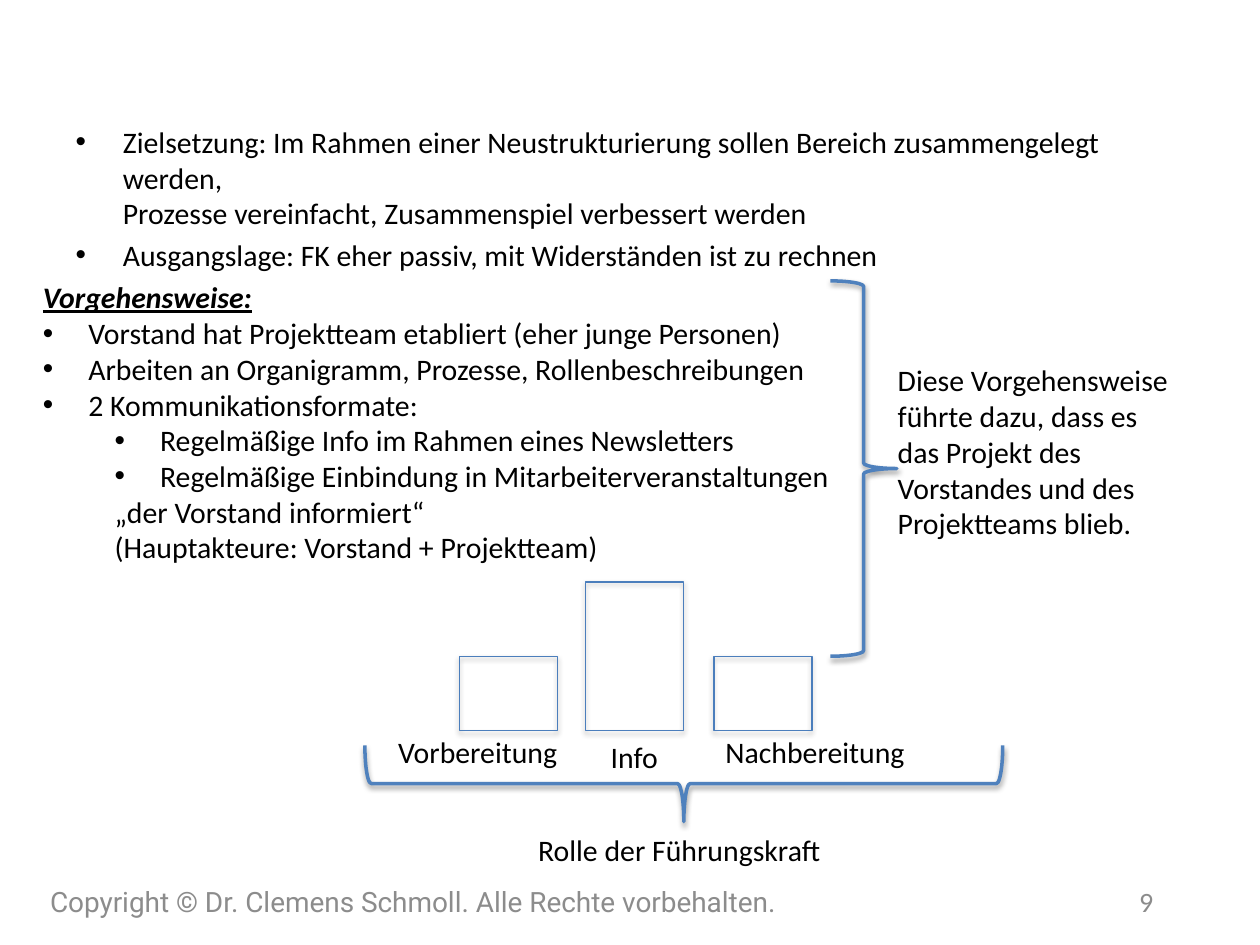
import pptx
import pptx.util
import pptx.dml.color
import pptx.enum.shapes
import pptx.enum.text
import pptx.oxml
import pptx.oxml.ns

Pt = pptx.util.Pt
Kind = pptx.enum.shapes.MSO_SHAPE
Fit = pptx.enum.text.MSO_AUTO_SIZE
Align = pptx.enum.text.PP_ALIGN
Mid = pptx.enum.text.MSO_ANCHOR.MIDDLE

HUES = {"text": "000000", "foot": "8C8C8C", "bar": "4B7EBC", "brace": "4F81BD",
        "shade": "000000"}
BODY = {"size": Pt(17), "name": "Calibri"}
HEAD = {**BODY, "bold": True, "italic": True, "underline": True}
NOTE = {"size": Pt(16), "name": "Roboto"}
PAGE = {"size": Pt(16), "name": "Calibri"}


def hue(key):
    return pptx.dml.color.RGBColor.from_string(HUES[key])


def put(item, values):
    for name, value in values.items():
        setattr(item, name, value)


def place(shape, box):
    put(shape, dict(zip(("left", "top", "width", "height"), map(Pt, box))))


def node(tag, **attrs):
    item = pptx.oxml.parse_xml(f"<a:{tag} {pptx.oxml.ns.nsdecls('a')}/>")
    for name, value in attrs.items():
        item.set(name, str(value))
    return item


def style(para, text, form, color="text", left=0, hang=0, before=0, level=0):
    """Fill a paragraph; a hanging indent brings a bullet."""
    para.text = text
    put(para, {"level": level, "space_before": Pt(before)})
    props = para._p.get_or_add_pPr()
    props.set("marL", str(Pt(left)))
    props.set("indent", str(-Pt(hang)))
    if hang:
        props.append(node("buFont", typeface="Arial"))
        props.append(node("buChar", char="•"))
    for run in para.runs:
        put(run.font, form)
        run.font.color.rgb = hue(color)


def fill(frame, rows):
    for i, row in enumerate(rows):
        para = frame.paragraphs[0] if i == 0 else frame.add_paragraph()
        style(para, **row)


def label(slide, box, *texts, wrap=False):
    rows = [{"text": text, "form": BODY} for text in texts]
    return block(slide, box, rows, wrap)


def block(slide, box, rows, wrap=True):
    frame = slide.shapes.add_textbox(*map(Pt, box)).text_frame
    put(frame, {"word_wrap": wrap, "auto_size": Fit.SHAPE_TO_FIT_TEXT,
                "margin_left": Pt(8), "margin_right": Pt(8),
                "margin_top": Pt(4), "margin_bottom": Pt(4)})
    fill(frame, rows)
    return frame


def outline(slide, kind, box, color, width, blur, dist, alpha):
    """Draw an unfilled shape with a soft shadow below it."""
    shape = slide.shapes.add_shape(kind, *map(Pt, box))
    shape.fill.background()
    shape.line.color.rgb = hue(color)
    shape.line.width = Pt(width)
    shape.shadow.inherit = False
    shade = node("outerShdw", blurRad=Pt(blur), dist=Pt(dist), dir=5400000,
                 rotWithShape=0)
    tone = node("srgbClr", val=HUES["shade"])
    tone.append(node("alpha", val=alpha * 1000))
    shade.append(tone)
    shape._element.spPr.find(pptx.oxml.ns.qn("a:effectLst")).append(shade)
    return shape


def brace(slide, box):
    return outline(slide, Kind.RIGHT_BRACE, box, "brace", 2, 3.1, 1.6, 38)


def aims(slide, box):
    slide.shapes.title._element.getparent().remove(slide.shapes.title._element)
    body = slide.placeholders[1]
    place(body, box)
    body.text_frame.auto_size = Fit.NONE
    point = {"form": BODY, "left": 27, "hang": 27}
    fill(body.text_frame, [
        {"text": "Zielsetzung: Im Rahmen einer Neustrukturierung sollen Bereich "
                 "zusammengelegt werden,\vProzesse vereinfacht, "
                 "Zusammenspiel verbessert werden", **point},
        {"text": "Ausgangslage: FK eher passiv, mit Widerständen ist zu rechnen",
         "before": 3.4, **point}])


def steps(slide, box):
    main = {"form": BODY, "left": 26, "hang": 26}
    sub = {"form": BODY, "left": 67, "hang": 26, "level": 1}
    block(slide, box, [
        {"text": "Vorgehensweise:", "form": HEAD},
        {"text": "Vorstand hat Projektteam etabliert (eher junge Personen)", **main},
        {"text": "Arbeiten an Organigramm, Prozesse, Rollenbeschreibungen", **main},
        {"text": "2 Kommunikationsformate:", **main},
        {"text": "Regelmäßige Info im Rahmen eines Newsletters", **sub},
        {"text": "Regelmäßige Einbindung in Mitarbeiterveranstaltungen", **sub},
        {"text": "„der Vorstand informiert“\v(Hauptakteure: Vorstand + Projektteam)",
         "form": BODY, "left": 41, "level": 1}])


def result(slide, box):
    x, y, w, h = box
    brace(slide, (x, y, 38, h))
    label(slide, (x + 30.5, y + 42.5, w - 30.5, 111.5),
          "Diese Vorgehensweise\vführte dazu, dass es\vdas Projekt des",
          "Vorstandes und des\vProjektteams blieb.")


def phases(slide, box):
    x, y, w, h = box
    base = y + 85
    # Bars on one base line, each with its label: text, bar, height, label box
    for text, left, tall, start, drop, wide, wrap in (
            ("Vorbereitung", 54, 42.5, 11, -2, 128, True),
            ("Info", 126, 85, 132.5, 0.5, 44, False),
            ("Nachbereitung", 199.5, 42.5, 198, -2, 120, False)):
        outline(slide, Kind.RECTANGLE, (x + left, base - tall, 56, tall),
                "bar", 0.75, 3.1, 1.8, 35)
        label(slide, (x + start, base + drop, wide, 29), text, wrap=wrap)
    # Brace turned to point down, spanning the whole width
    deep, top = 43.5, base + 8.5
    span = brace(slide, (x + (w - deep) / 2, top + (deep - w) / 2, deep, w))
    span.rotation = 90
    label(slide, (x + 91, y + h - 29, 180, 29), "Rolle der Führungskraft")


def foot(slide, box):
    x, y, w, h = box
    for text, left, wide, form, align in (
            ("Copyright © Dr. Clemens Schmoll. Alle Rechte vorbehalten.",
             x, 458, NOTE, Align.LEFT),
            ("9", x + w - 168, 168, PAGE, Align.RIGHT)):
        frame = slide.shapes.add_textbox(*map(Pt, (left, y, wide, h))).text_frame
        put(frame, {"word_wrap": True, "vertical_anchor": Mid})
        fill(frame, [{"text": text, "form": form, "color": "foot"}])
        frame.paragraphs[0].alignment = align


def main():
    deck = pptx.Presentation()
    put(deck, {"slide_width": Pt(720), "slide_height": Pt(540)})
    slide = deck.slides.add_slide(deck.slide_layouts[1])
    aims(slide, (36, 67, 630, 334))
    steps(slide, (16.5, 155.5, 548, 173))
    result(slide, (474.5, 160.5, 204, 214.5))
    phases(slide, (208.5, 332.5, 364.5, 168))
    foot(slide, (21.5, 500.5, 644.5, 29))
    deck.save("out.pptx")


if __name__ == "__main__":
    main()
